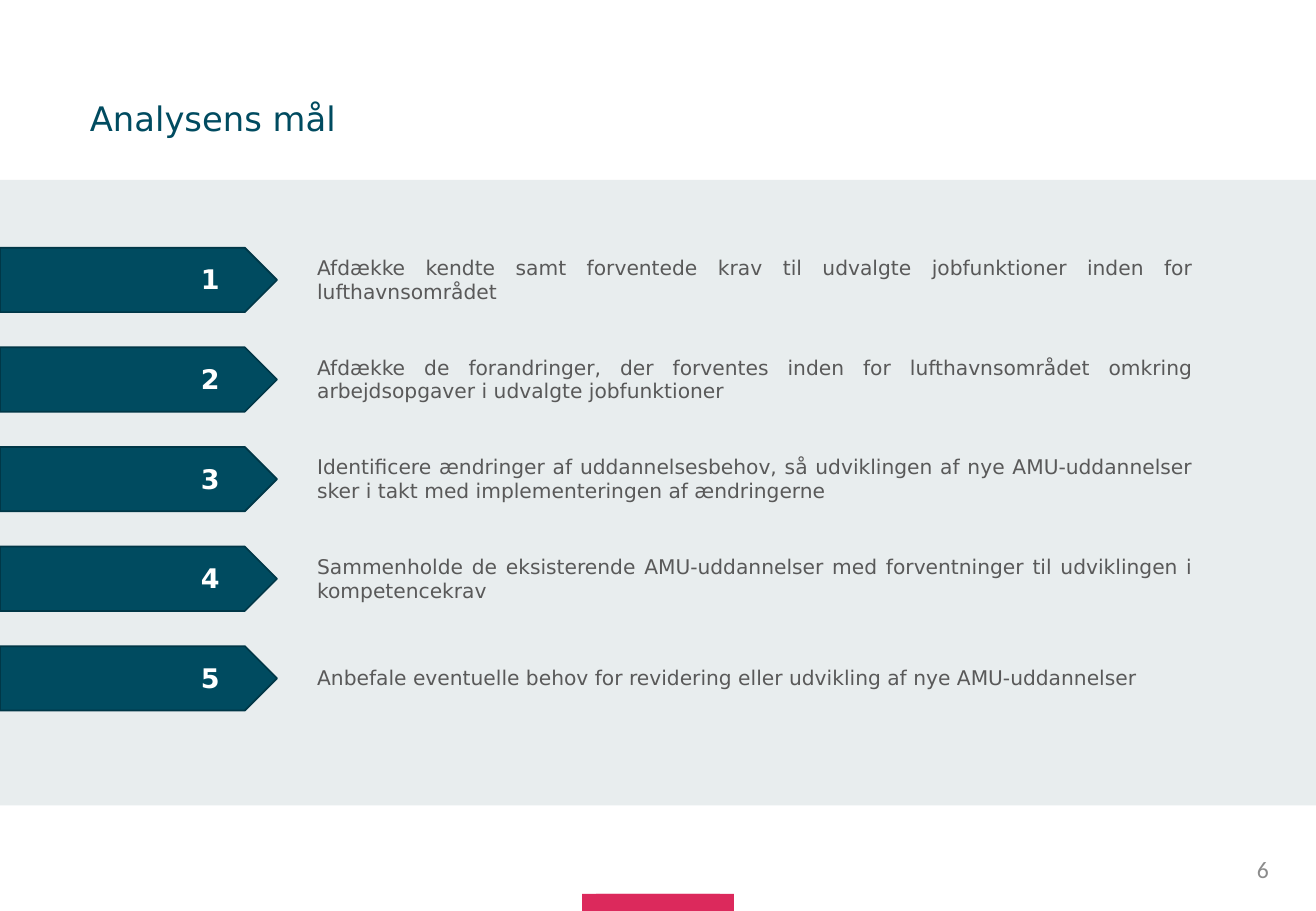
from lxml.etree import SubElement
from pptx import Presentation
from pptx.dml.color import RGBColor
from pptx.enum.shapes import MSO_SHAPE
from pptx.enum.text import MSO_ANCHOR, PP_ALIGN
from pptx.oxml.ns import qn
from pptx.util import Inches, Pt

FONT = "DejaVu Sans"
TEAL = "004B60"
PLAIN = "{2D5ABB26-0587-4C30-8999-92F81FD0307C}"
GOALS = [
    "Afdække kendte samt forventede krav til udvalgte jobfunktioner inden for lufthavnsområdet",
    "Afdække de forandringer, der forventes inden for lufthavnsområdet omkring arbejdsopgaver i udvalgte jobfunktioner",
    "Identificere ændringer af uddannelsesbehov, så udviklingen af nye AMU-uddannelser sker i takt med implementeringen af ændringerne",
    "Sammenholde de eksisterende AMU-uddannelser med forventninger til udviklingen i kompetencekrav",
    "Anbefale eventuelle behov for revidering eller udvikling af nye AMU-uddannelser",
]


def color(code):
    return RGBColor.from_string(code)


def add_run(para, text, size, code, font=FONT, bold=False):
    run = para.add_run()
    run.text = text
    run.font.name = font
    run.font.size = Pt(size)
    run.font.bold = bold
    run.font.color.rgb = color(code)


def add_block(slide, kind, box, fill, line=None, alpha=None):
    shape = slide.shapes.add_shape(kind, *map(Inches, box))
    shape.shadow.inherit = False
    shape.fill.solid()
    shape.fill.fore_color.rgb = color(fill)
    if alpha:
        tint = shape.fill._xPr.find(qn("a:solidFill"))[0]
        SubElement(tint, qn("a:alpha"), val=str(alpha * 1000))
    if line:
        shape.line.color.rgb = color(line)
        shape.line.width = Pt(1)
    else:
        shape.line.fill.background()


def add_label(slide, box, text, size, code, font=FONT, align=PP_ALIGN.LEFT, inset=True):
    frame = slide.shapes.add_textbox(*map(Inches, box)).text_frame
    frame.word_wrap = True
    frame.vertical_anchor = MSO_ANCHOR.MIDDLE
    if not inset:
        frame.margin_left = frame.margin_right = 0
        frame.margin_top = frame.margin_bottom = 0
    para = frame.paragraphs[0]
    para.alignment = align
    para.line_spacing = 0.9
    add_run(para, text, size, code, font)


def fill_cell(cell, align, text, size, code, bold):
    cell.fill.background()
    cell.vertical_anchor = MSO_ANCHOR.MIDDLE
    para = cell.text_frame.paragraphs[0]
    para.alignment = align
    add_run(para, text, size, code, bold=bold)


def add_goals(slide, box):
    left, top, width, height = box
    pitch = height / len(GOALS)
    for row in range(len(GOALS)):
        arrow = (0, top + 0.14 + row * pitch, 2.28, 0.53)
        add_block(slide, MSO_SHAPE.PENTAGON, arrow, TEAL, "003747")

    table = slide.shapes.add_table(len(GOALS), 2, *map(Inches, box)).table
    table.first_row = table.horz_banding = False
    table._tbl.tblPr.find(qn("a:tableStyleId")).text = PLAIN
    table.columns[0].width = Inches(1.56)
    table.columns[1].width = Inches(width - 1.56)
    for row, goal in enumerate(GOALS):
        table.rows[row].height = Inches(pitch)
        fill_cell(table.cell(row, 0), PP_ALIGN.CENTER, str(row + 1), 16, "FFFFFF", True)
        fill_cell(table.cell(row, 1), PP_ALIGN.JUSTIFY, goal, 12, "595959", False)


def add_footer(slide, box):
    left, top, width, height = box
    for bar in (1.25, 1.02):
        place = (left + (width - bar) / 2, top + height - 0.14, bar, 0.14)
        add_block(slide, MSO_SHAPE.RECTANGLE, place, "DC295C")
    number = (left + width - 2.73, top, 2.44, 0.4)
    add_label(slide, number, "6", 14, "8C8C8C", "Calibri", PP_ALIGN.RIGHT)


def main():
    deck = Presentation()
    deck.slide_width = Inches(10.83)
    deck.slide_height = Inches(7.5)
    slide = deck.slides.add_slide(deck.slide_layouts[6])
    add_footer(slide, (0, 6.97, 10.83, 0.53))
    add_block(slide, MSO_SHAPE.RECTANGLE, (0, 1.48, 10.83, 5.15), "8DA5AD", alpha=20)
    add_label(slide, (0.74, 0.79, 9.34, 0.4), "Analysens mål", 20, TEAL, inset=False)
    add_goals(slide, (0.95, 1.9, 8.97, 4.1))
    deck.save("out.pptx")


if __name__ == "__main__":
    main()
